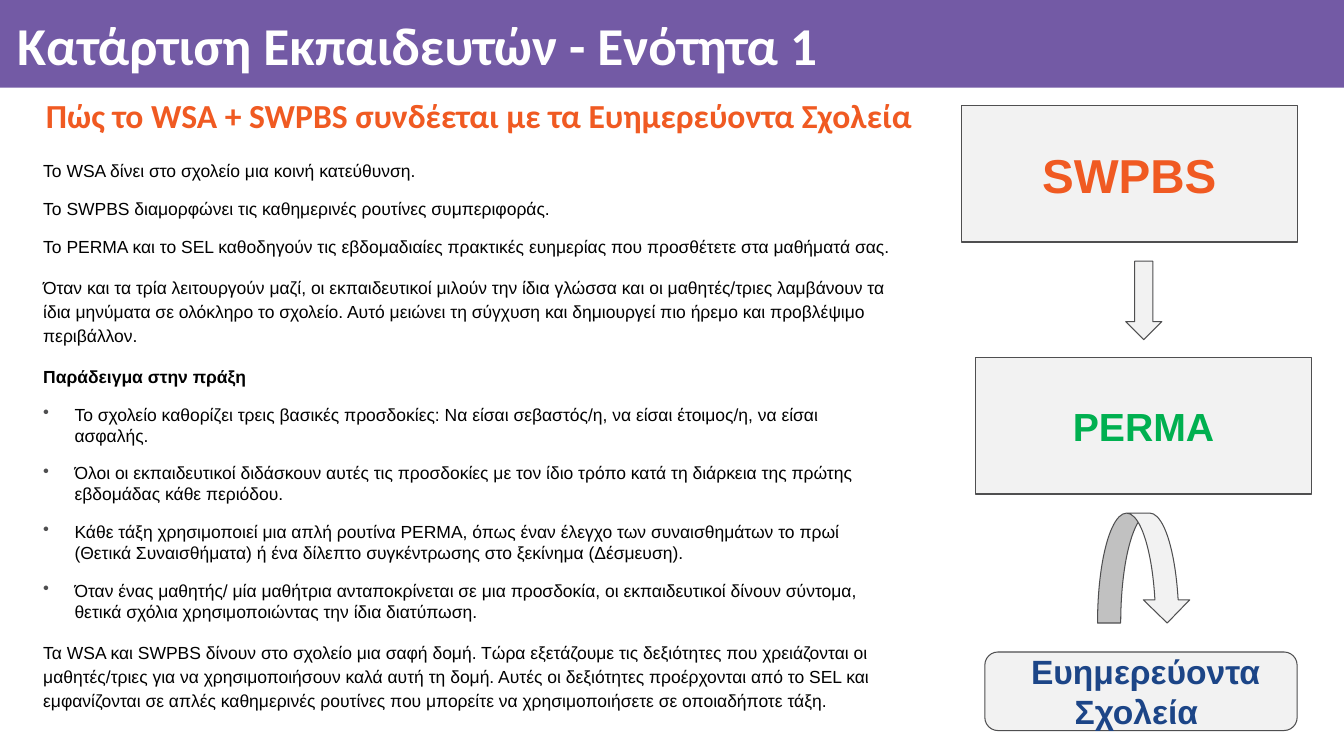
from dataclasses import dataclass

from lxml import etree
from pptx import Presentation
from pptx.dml.color import RGBColor
from pptx.enum.shapes import MSO_SHAPE
from pptx.enum.text import MSO_ANCHOR, MSO_AUTO_SIZE, PP_ALIGN
from pptx.oxml.ns import qn
from pptx.util import Cm, Pt

RECT, ROUNDED = MSO_SHAPE.RECTANGLE, MSO_SHAPE.ROUNDED_RECTANGLE
DOWN, CURVED = MSO_SHAPE.DOWN_ARROW, MSO_SHAPE.CURVED_DOWN_ARROW
TOP, MIDDLE = MSO_ANCHOR.TOP, MSO_ANCHOR.MIDDLE
LEFT, CENTER, JUSTIFY = PP_ALIGN.LEFT, PP_ALIGN.CENTER, PP_ALIGN.JUSTIFY
NO_AUTOFIT = MSO_AUTO_SIZE.NONE


@dataclass(frozen=True)
class Theme:
    """Colours, fonts and type sizes of the slide."""
    purple: str = "735AA5"
    orange: str = "F05A22"
    green: str = "00B050"
    navy: str = "1C4587"
    panel: str = "F2F2F2"
    outline: str = "4F4F50"
    white: str = "FFFFFF"
    black: str = "000000"
    heading_font: str = "Calibri"
    body_font: str = "Arial"
    title_size: float = 38
    subtitle_size: float = 24
    body_size: float = 12.5
    swpbs_size: float = 34
    perma_size: float = 28
    schools_size: float = 24


THEME = Theme()

TITLE = "Κατάρτιση Εκπαιδευτών - Ενότητα 1"
SUBTITLE = "Πώς το WSA + SWPBS συνδέεται με τα Ευημερεύοντα Σχολεία"
ROLES = [
    "Το WSA δίνει στο σχολείο μια κοινή κατεύθυνση.",
    "Το SWPBS διαμορφώνει τις καθημερινές ρουτίνες συμπεριφοράς.",
    "Το PERMA και το SEL καθοδηγούν τις εβδομαδιαίες πρακτικές ευημερίας που προσθέτετε στα μαθήματά σας.",
]
TOGETHER = (
    "Όταν και τα τρία λειτουργούν μαζί, οι εκπαιδευτικοί μιλούν την ίδια γλώσσα και οι μαθητές/τριες "
    "λαμβάνουν τα ίδια μηνύματα σε ολόκληρο το σχολείο. Αυτό μειώνει τη σύγχυση και δημιουργεί πιο "
    "ήρεμο και προβλέψιμο περιβάλλον."
)
EXAMPLE_HEADING = "Παράδειγμα στην πράξη"
EXAMPLES = [
    "Το σχολείο καθορίζει τρεις βασικές προσδοκίες: Να είσαι σεβαστός/η, να είσαι έτοιμος/η, "
    "να είσαι ασφαλής.",
    "Όλοι οι εκπαιδευτικοί διδάσκουν αυτές τις προσδοκίες με τον ίδιο τρόπο κατά τη διάρκεια της "
    "πρώτης εβδομάδας κάθε περιόδου.",
    "Κάθε τάξη χρησιμοποιεί μια απλή ρουτίνα PERMA, όπως έναν έλεγχο των συναισθημάτων το πρωί "
    "(Θετικά Συναισθήματα) ή ένα δίλεπτο συγκέντρωσης στο ξεκίνημα (Δέσμευση).",
    "Όταν ένας μαθητής/ μία μαθήτρια ανταποκρίνεται σε μια προσδοκία, οι εκπαιδευτικοί δίνουν "
    "σύντομα, θετικά σχόλια χρησιμοποιώντας την ίδια διατύπωση.",
]
CLOSING = (
    "Τα WSA και SWPBS δίνουν στο σχολείο μια σαφή δομή. Τώρα εξετάζουμε τις δεξιότητες που "
    "χρειάζονται οι μαθητές/τριες για να χρησιμοποιήσουν καλά αυτή τη δομή. Αυτές οι δεξιότητες "
    "προέρχονται από το SEL και εμφανίζονται σε απλές καθημερινές ρουτίνες που μπορείτε να "
    "χρησιμοποιήσετε σε οποιαδήποτε τάξη."
)


def write(frame, text, size=THEME.body_size, color=THEME.black, font=THEME.body_font, bold=False,
          align=LEFT, before=0, spacing=1.0, margin=0, indent=0, bullet=None):
    """Write one formatted paragraph, using the frame's first one while it is empty."""
    first = frame.paragraphs[0]
    paragraph = frame.add_paragraph() if first.text else first
    paragraph.alignment, paragraph.line_spacing = align, spacing
    paragraph.space_before = Pt(before)
    run = paragraph.add_run()
    run.text = text
    run.font.size, run.font.name, run.font.bold = Pt(size), font, bold
    run.font.color.rgb = RGBColor.from_string(color)
    properties = paragraph._p.get_or_add_pPr()
    properties.set("marL", str(Cm(margin)))
    properties.set("indent", str(Cm(indent)))
    if bullet:
        bullet_color = etree.SubElement(properties, qn("a:buClr"))
        etree.SubElement(bullet_color, qn("a:srgbClr"), val=THEME.outline)
        etree.SubElement(properties, qn("a:buChar"), char=bullet)


def set_frame(shape, anchor, side, edge):
    """Wrap a shape's text, fix its anchor and margins in cm, and return the frame."""
    frame = shape.text_frame
    frame.word_wrap, frame.auto_size, frame.vertical_anchor = True, NO_AUTOFIT, anchor
    frame.margin_left = frame.margin_right = Cm(side)
    frame.margin_top = frame.margin_bottom = Cm(edge)
    return frame


def add_panel(slide, kind, box, fill, line=None):
    """Add a flat filled shape with an optional thin outline."""
    panel = slide.shapes.add_shape(kind, *map(Cm, box))
    panel.shadow.inherit = False
    panel.fill.solid()
    panel.fill.fore_color.rgb = RGBColor.from_string(fill)
    if line:
        panel.line.color.rgb = RGBColor.from_string(line)
        panel.line.width = Pt(0.75)
    else:
        panel.line.fill.background()
    return panel


def add_header(slide, box):
    """Place the title on its purple band."""
    left, top, width, height = box
    band = add_panel(slide, RECT, box, THEME.purple)
    title = slide.shapes.title
    title.element.addprevious(band.element)
    title.left, title.top = Cm(left + 0.28), Cm(top + 0.23)
    title.width, title.height = Cm(width - 0.7), Cm(height - 0.23)
    write(set_frame(title, MIDDLE, 0.15, 0.15), TITLE, size=THEME.title_size, color=THEME.white,
          font=THEME.heading_font, bold=True, spacing=0.9)


def add_subtitle(slide, box):
    """Place the orange question under the band."""
    subtitle = slide.shapes.add_textbox(*map(Cm, box))
    write(set_frame(subtitle, MIDDLE, 0.25, 0.13), SUBTITLE, size=THEME.subtitle_size,
          color=THEME.orange, font=THEME.heading_font, bold=True, align=JUSTIFY, before=10,
          spacing=0.9, margin=1.27, indent=-0.64)


def add_explanation(slide, box):
    """Place the explanation with its bulleted classroom examples."""
    explanation = slide.shapes.add_textbox(*map(Cm, box))
    frame = set_frame(explanation, TOP, 0.25, 0.13)
    for role in ROLES:
        write(frame, role, before=12)
    write(frame, TOGETHER, before=12, spacing=1.15)
    write(frame, EXAMPLE_HEADING, before=12, spacing=1.15, bold=True)
    for example in EXAMPLES:
        write(frame, example, before=12, margin=0.79, indent=-0.79, bullet="•")
    write(frame, CLOSING, before=12, spacing=1.15)


def add_flow(slide, box):
    """Stack the steps from SWPBS to flourishing schools down the box."""
    left, top, width, _ = box
    step_width, step_height = width - 0.36, 3.43
    steps = [
        (RECT, 0, 0, step_width, step_height, "SWPBS", THEME.swpbs_size, THEME.orange),
        (DOWN, 4.14, 0.48, 0.91, 1.98, None, None, None),
        (RECT, 0.36, 0.46, step_width, step_height, "PERMA", THEME.perma_size, THEME.green),
        (CURVED, 3.43, 0.48, 2.34, 2.77, None, None, None),
        (ROUNDED, 0.59, 0.73, 7.87, 1.98, " Ευημερεύοντα Σχολεία ", THEME.schools_size, THEME.navy),
    ]
    for kind, offset, gap, step_w, step_h, label, size, color in steps:
        top += gap
        step = add_panel(slide, kind, (left + offset, top, step_w, step_h), THEME.panel, THEME.outline)
        if label:
            write(set_frame(step, MIDDLE, 0.25, 0.25), label, size=size, color=color, bold=True,
                  align=CENTER)
        top += step_h


def main():
    """Build the slide and save it."""
    deck = Presentation()
    deck.slide_width, deck.slide_height = Cm(33.87), Cm(19.05)
    slide = deck.slides.add_slide(deck.slide_layouts[5])
    add_header(slide, (0, 0, 33.87, 2.21))
    add_explanation(slide, (0.84, 3.91, 21.97, 14.91))
    add_flow(slide, (24.23, 2.67, 8.82, 15.74))
    add_subtitle(slide, (0.28, 2.21, 33.17, 1.52))
    deck.save("out.pptx")


if __name__ == "__main__":
    main()
